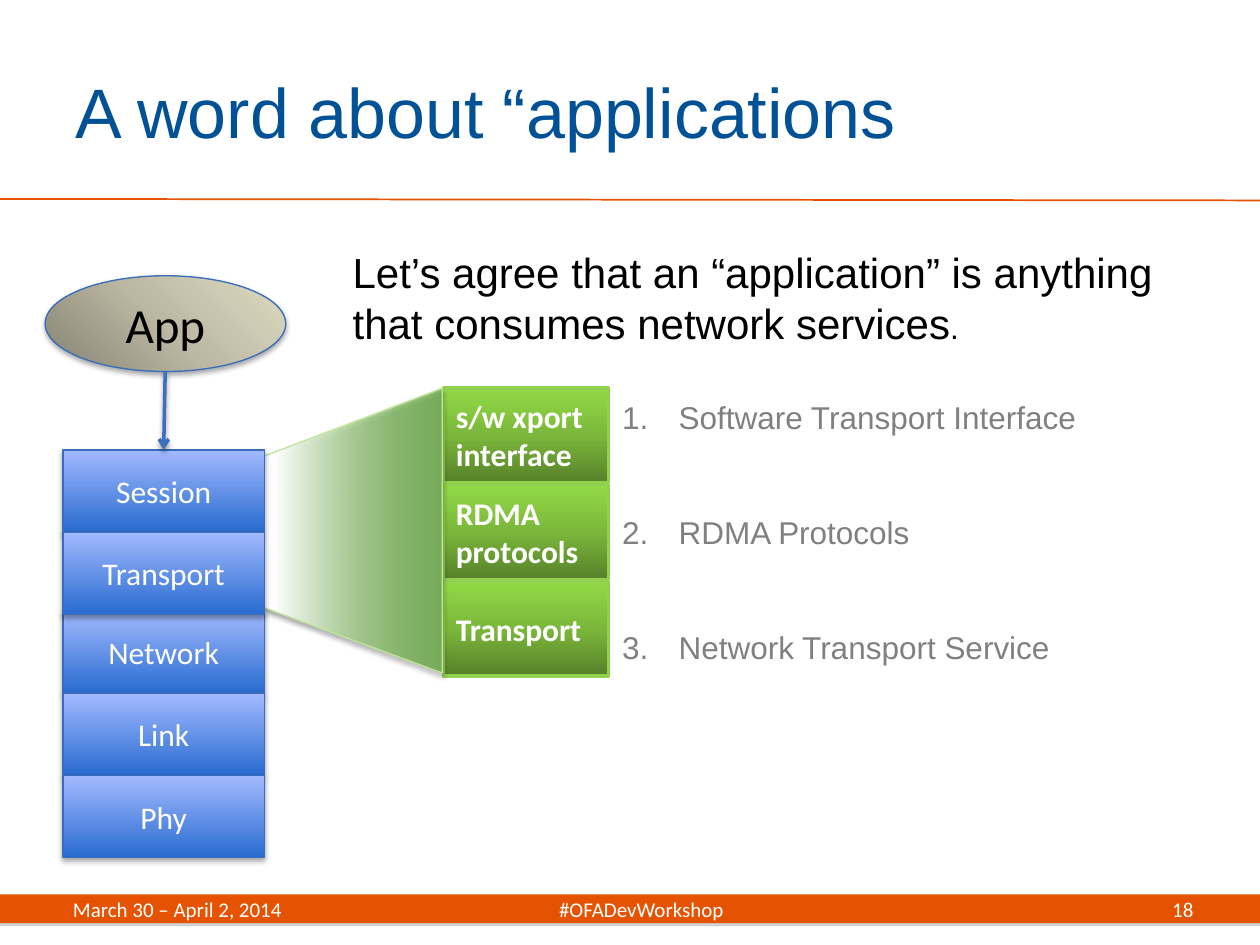
from lxml import etree
from pptx import Presentation
from pptx import util as u
from pptx.dml.color import RGBColor
from pptx.enum import shapes, text
from pptx.oxml.ns import nsdecls, qn

# Content
TITLE = "A word about “applications"
STATEMENT = [("Let’s agree that an “application” is anything that consumes network services", 24),
             (".", 18)]
UPPER_LAYERS = ["Session", "Transport"]
LOWER_LAYERS = ["Network", "Link", "Phy"]
DETAILS = ["s/w xport interface", "RDMA protocols", "Transport"]
SERVICES = ["Software Transport Interface", "RDMA Protocols", "Network Transport Service"]
FOOTER = "March 30 – April 2, 2014\t#OFADevWorkshop"
PAGE = "18"

# Theme: gradients are (angle, [(position, colour, opacity), ...])
THEME = dict(
    orange="E55302", arrow="3C6FBD",
    blue=(270, [(0, "296BD0", 100), (100, "A2BAFF", 100)]),
    green=(270, [(0, "57812A", 100), (50, "7BB73B", 100), (100, "92DA46", 100)]),
    stone=(315, [(0, "848273", 100), (50, "BCB8A3", 100), (100, "DFDBC2", 100)]),
    fan=(270, [(0, "399406", 57), (44, "FFFFFF", 100)]),
    blue_line=("386CBC", 0.75), green_line=("92D050", 2), fan_line=("C2E49C", 0.75),
    # shadows: colour, opacity, blur, distance
    soft=("000000", 35, 3.1, 1.8), arrow_soft=("000000", 38, 3.1, 1.6),
    band_soft=("808080", 35, 0, 1.8),
    title=dict(name="Arial", size=40, color="005195"),
    statement=dict(name="Arial", color="000000"),
    service=dict(name="Arial", size=18, color="808080"),
    layer=dict(name="Calibri", size=18, color="FFFFFF"),
    detail=dict(name="Calibri", size=18, color="FFFFFF", bold=True),
    app=dict(name="Calibri", size=28, color="000000"),
    footer=dict(name="Calibri", size=12, color="FFFFFF"),
)
LEFT, CENTER, RIGHT = text.PP_ALIGN.LEFT, text.PP_ALIGN.CENTER, text.PP_ALIGN.RIGHT
TOP, MIDDLE = text.MSO_ANCHOR.TOP, text.MSO_ANCHOR.MIDDLE
SHAPE = shapes.MSO_SHAPE

prs = Presentation()
prs.slide_width, prs.slide_height = u.Cm(25.4), u.Cm(19.05)
s = prs.slides.add_slide(prs.slide_layouts[6])


def cm(*values):
    return [u.Cm(v) for v in values]


def xml(tag, inner="", **attrs):
    attr = " ".join(f'{k}="{v}"' for k, v in attrs.items())
    return f"<a:{tag} {nsdecls('a')} {attr}>{inner}</a:{tag}>"


def color_xml(color, opacity):
    return xml("srgbClr", xml("alpha", val=opacity * 1000), val=color)


def set_font(font, fmt):
    for key, value in fmt.items():
        if key == "color":
            font.color.rgb = RGBColor.from_string(value)
        else:
            setattr(font, key, u.Pt(value) if key == "size" else value)


def write(tf, content, fmt, align=LEFT, anchor=MIDDLE):
    tf.word_wrap, tf.vertical_anchor = True, anchor
    p = tf.paragraphs[0]
    p.alignment = align
    r = p.add_run()
    r.text = content
    set_font(r.font, fmt)
    return p


def text_box(box):
    return s.shapes.add_textbox(*cm(*box)).text_frame


def add_shadow(spPr, shadow):
    effects = spPr.find(qn("a:effectLst"))
    if effects is None:
        effects = etree.SubElement(spPr, qn("a:effectLst"))
    if shadow:
        color, opacity, blur, dist = shadow
        effects.append(etree.fromstring(xml(
            "outerShdw", color_xml(color, opacity), blurRad=u.Pt(blur), dist=u.Pt(dist),
            dir=5400000, algn="ctr", rotWithShape=0)))


def add_shape(kind, box, fill, line=None, shadow=None):
    sp = s.shapes.add_shape(kind, *cm(*box))
    if isinstance(fill, str):
        sp.fill.solid()
        sp.fill.fore_color.rgb = RGBColor.from_string(fill)
    else:
        angle, stops = fill
        sp.fill.gradient()
        sp.fill.gradient_angle = 360 - angle
        gs_list = sp._element.spPr.find(".//" + qn("a:gsLst"))
        gs_list[:] = [etree.fromstring(xml("gs", color_xml(c, o), pos=pos * 1000))
                      for pos, c, o in stops]
    if line:
        sp.line.color.rgb = RGBColor.from_string(line[0])
        sp.line.width = u.Pt(line[1])
    else:
        sp.line.fill.background()
    sp.shadow.inherit = False
    add_shadow(sp._element.spPr, shadow)
    return sp


def add_line(ends, color, width, shadow=None, arrow=False):
    cx = s.shapes.add_connector(shapes.MSO_CONNECTOR.STRAIGHT, *cm(*ends))
    cx.line.color.rgb = RGBColor.from_string(color)
    cx.line.width = u.Pt(width)
    if arrow:
        cx.line._get_or_add_ln().append(etree.fromstring(xml("tailEnd", type="arrow")))
    add_shadow(cx._element.spPr, shadow)


def add_layers(top, names):
    for i, name in enumerate(names):
        sp = add_shape(SHAPE.RECTANGLE, (1.27, top + i * 1.66, 4.06, 1.65),
                       THEME["blue"], THEME["blue_line"], THEME["soft"])
        write(sp.text_frame, name, THEME["layer"], CENTER)


# Footer band, rule and title
add_shape(SHAPE.RECTANGLE, (0, 18.03, 25.4, 0.58), THEME["orange"], shadow=THEME["band_soft"])
add_line((0, 4.01, 25.4, 4.04), THEME["orange"], 1)
write(text_box((1.27, 0.64, 20.75, 3.18)), TITLE, THEME["title"])

# Detail boxes
for i, name in enumerate(DETAILS):
    sp = add_shape(SHAPE.RECTANGLE, (8.94, 7.82 + i * 1.95, 3.33, 1.91),
                   THEME["green"], THEME["green_line"])
    write(sp.text_frame, name, THEME["detail"])

# Lower layers, behind the fan
add_layers(12.32, LOWER_LAYERS)

# Numbered services
tf = text_box((12.29, 7.9, 11.86, 5.64))
tf.word_wrap = True
for i, name in enumerate(SERVICES):
    p = tf.add_paragraph() if i else tf.paragraphs[0]
    if i:
        p.space_before = u.Pt(44)
    pPr = p._p.get_or_add_pPr()
    pPr.set("marL", str(u.Cm(1.14)))
    pPr.set("indent", str(-u.Cm(1.14)))
    pPr.append(etree.fromstring(xml("buFont", typeface="+mj-lt")))
    pPr.append(etree.fromstring(xml("buAutoNum", type="arabicPeriod", startAt=i + 1)))
    r = p.add_run()
    r.text = name
    set_font(r.font, THEME["service"])

# Statement
tf = text_box((6.86, 4.85, 17.27, 2.31))
tf.word_wrap = True
for content, size in STATEMENT:
    r = tf.paragraphs[0].add_run()
    r.text = content
    set_font(r.font, dict(THEME["statement"], size=size))

# Fan from the upper layers to the detail boxes
fan = add_shape(SHAPE.ISOSCELES_TRIANGLE, (2.21, 6.86, 5.74, 7.67),
                THEME["fan"], THEME["fan_line"], THEME["soft"])
fan.adjustments[0] = 0.49
fan.rotation = 270
add_layers(9.07, UPPER_LAYERS)

# Application and its arrow
app = add_shape(SHAPE.OVAL, (0.91, 5.56, 4.85, 1.93),
                THEME["stone"], THEME["blue_line"], THEME["soft"])
write(app.text_frame, "App", THEME["app"], CENTER)
add_line((3.33, 7.49, 3.3, 9.07), THEME["arrow"], 2, THEME["arrow_soft"], arrow=True)

# Footer text
write(text_box((21.29, 18.03, 3.02, 0.58)), PAGE, THEME["footer"], RIGHT)
p = write(text_box((1.22, 18.03, 22.99, 0.58)), FOOTER, THEME["footer"])
p._p.get_or_add_pPr().append(etree.fromstring(
    xml("tabLst", xml("tab", pos=u.Cm(11.46), algn="ctr"))))

prs.save("out.pptx")
